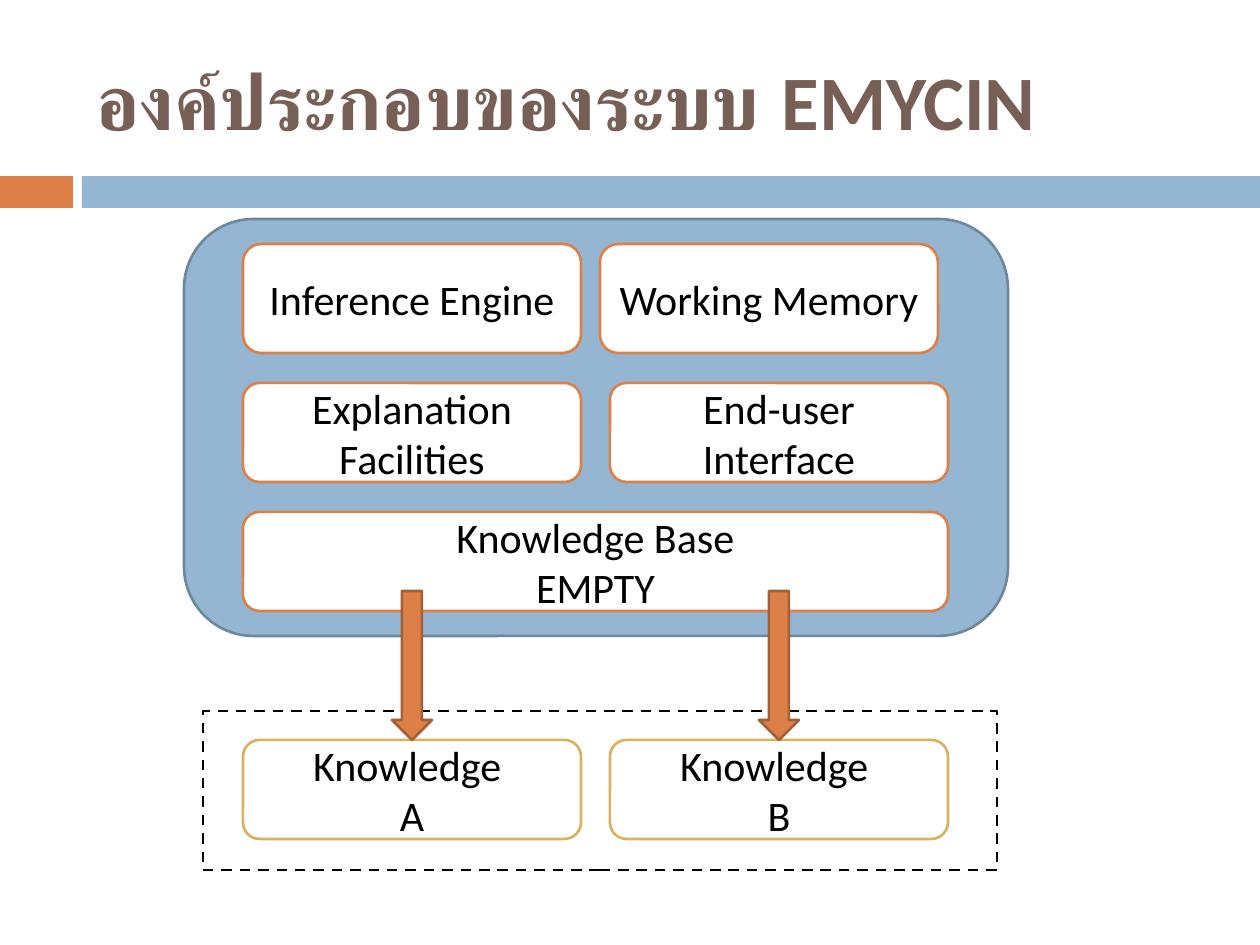
from dataclasses import dataclass
from typing import Optional

from pptx import Presentation
from pptx.dml.color import RGBColor
from pptx.enum.dml import MSO_LINE
from pptx.enum.shapes import MSO_SHAPE
from pptx.enum.text import MSO_ANCHOR, MSO_AUTO_SIZE, PP_ALIGN
from pptx.util import Emu, Pt

RECTANGLE = MSO_SHAPE.RECTANGLE
ROUNDED = MSO_SHAPE.ROUNDED_RECTANGLE
DOWN_ARROW = MSO_SHAPE.DOWN_ARROW
DASH = MSO_LINE.DASH
MIDDLE = MSO_ANCHOR.MIDDLE
NO_AUTOFIT = MSO_AUTO_SIZE.NONE
LEFT = PP_ALIGN.LEFT
CENTER = PP_ALIGN.CENTER

WHITE = RGBColor(0xFF, 0xFF, 0xFF)
BLACK = RGBColor(0x00, 0x00, 0x00)
BROWN = RGBColor(0x77, 0x5F, 0x55)
BLUE = RGBColor(0x94, 0xB6, 0xD2)
DARK_BLUE = RGBColor(0x6D, 0x87, 0x9B)
ORANGE = RGBColor(0xDD, 0x80, 0x47)
DARK_ORANGE = RGBColor(0xA3, 0x5F, 0x35)
GOLD = RGBColor(0xD8, 0xB2, 0x5C)

EMU_PER_PX = 914400 / 126
FRAME_FORMAT = {"word_wrap": True, "auto_size": NO_AUTOFIT, "vertical_anchor": MIDDLE}
TITLE_FONT = {"name": "Calibri", "size": Pt(44), "bold": True}
BOX_FONT = {"name": "Calibri", "size": Pt(24)}

LEFT_COLUMN = 243
RIGHT_COLUMN = 610
BOX_WIDTH = 338
BOX_HEIGHT = 99
FULL_WIDTH = RIGHT_COLUMN + BOX_WIDTH - LEFT_COLUMN
ARROW_WIDTH = 40
ARROW_OFFSET = (BOX_WIDTH - ARROW_WIDTH) // 2


@dataclass(frozen=True)
class Block:
    left: int
    top: int
    width: int
    height: int
    fill: RGBColor = WHITE
    line: Optional[RGBColor] = ORANGE
    geometry: MSO_SHAPE = ROUNDED
    text: str = ""
    dashed: bool = False


BLOCKS = [
    Block(0, 176, 73, 32, ORANGE, None, RECTANGLE),
    Block(82, 176, 1178, 32, BLUE, None, RECTANGLE),
    Block(203, 711, 794, 159, WHITE, BLACK, RECTANGLE, dashed=True),
    Block(184, 219, 824, 417, BLUE, DARK_BLUE),
    Block(LEFT_COLUMN, 244, BOX_WIDTH, 109, text="Inference Engine"),
    Block(600, 244, BOX_WIDTH, 109, text="Working Memory"),
    Block(LEFT_COLUMN, 383, BOX_WIDTH, BOX_HEIGHT, text="Explanation Facilities"),
    Block(RIGHT_COLUMN, 383, BOX_WIDTH, BOX_HEIGHT, text="End-user Interface"),
    Block(LEFT_COLUMN, 512, FULL_WIDTH, BOX_HEIGHT, text="Knowledge Base\nEMPTY"),
]
for column, letter in ((LEFT_COLUMN, "A"), (RIGHT_COLUMN, "B")):
    BLOCKS += [
        Block(column, 740, BOX_WIDTH, BOX_HEIGHT, line=GOLD, text=f"Knowledge \n{letter}"),
        Block(column + ARROW_OFFSET, 591, ARROW_WIDTH, 149, ORANGE, DARK_ORANGE, DOWN_ARROW),
    ]


def px(length: int) -> Emu:
    return Emu(round(length * EMU_PER_PX))


def apply_format(target, values: dict) -> None:
    for name, value in values.items():
        setattr(target, name, value)


def write_text(shape, text: str, font: dict, color: RGBColor, alignment) -> None:
    frame = shape.text_frame
    frame.text = text
    apply_format(frame, FRAME_FORMAT)
    for paragraph in frame.paragraphs:
        paragraph.alignment = alignment
        for run in paragraph.runs:
            apply_format(run.font, font)
            run.font.color.rgb = color


def draw_block(slide, block: Block) -> None:
    shape = slide.shapes.add_shape(
        block.geometry, px(block.left), px(block.top), px(block.width), px(block.height)
    )
    shape.shadow.inherit = False
    shape.fill.solid()
    shape.fill.fore_color.rgb = block.fill
    if block.line is None:
        shape.line.fill.background()
    else:
        shape.line.color.rgb = block.line
        shape.line.width = Pt(1.5)
    if block.dashed:
        shape.line.dash_style = DASH
    if block.text:
        write_text(shape, block.text, BOX_FONT, BLACK, CENTER)


def main() -> None:
    presentation = Presentation()
    apply_format(presentation, {"slide_width": px(1260), "slide_height": px(945)})
    slide = presentation.slides.add_slide(presentation.slide_layouts[5])
    title = slide.shapes.title
    apply_format(
        title, {"left": px(84), "top": px(32), "width": px(1124), "height": px(136)}
    )
    write_text(title, "องค์ประกอบของระบบ EMYCIN", TITLE_FONT, BROWN, LEFT)
    for block in BLOCKS:
        draw_block(slide, block)
    presentation.save("out.pptx")


if __name__ == "__main__":
    main()
